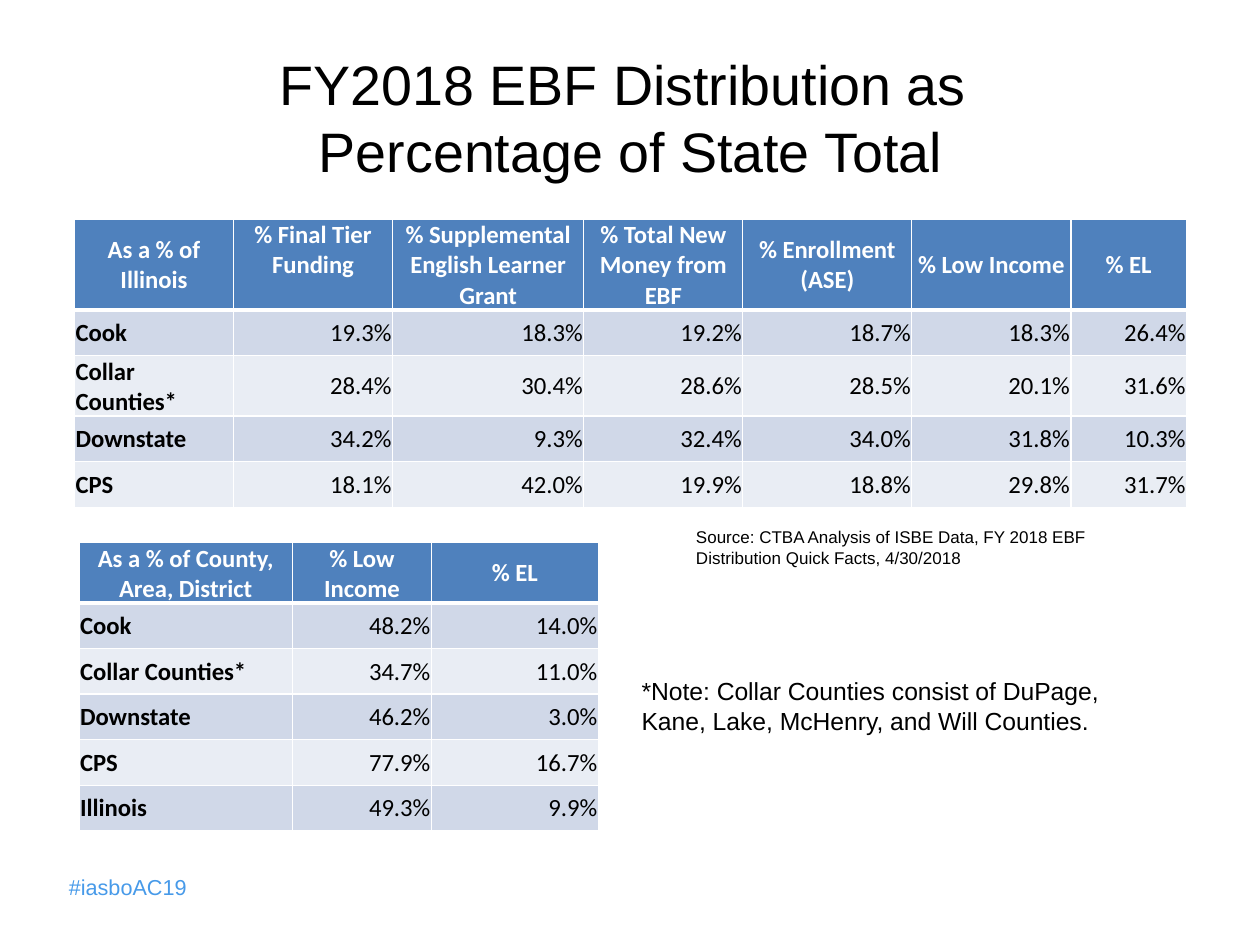
from copy import deepcopy
from dataclasses import dataclass

from pptx import Presentation
from pptx.dml.color import RGBColor as Color
from pptx.enum.text import MSO_ANCHOR as Anchor, MSO_AUTO_SIZE as AutoSize, PP_ALIGN as Align
from pptx.oxml import parse_xml
from pptx.oxml.ns import nsdecls, qn
from pptx.util import Emu, Pt

EMU_PER_PX = 9144


@dataclass(frozen=True)
class Theme:
    """Colours, fonts and type sizes of the slide."""
    text: str = "000000"
    white: str = "FFFFFF"
    header: str = "4F81BD"
    bands: tuple = ("D0D8E8", "E9EDF4")
    hashtag: str = "479AE9"
    body_font: str = "Arial"
    table_font: str = "Calibri"
    title_size: int = 36
    table_size: int = 16
    note_size: int = 16
    hashtag_size: int = 14
    source_size: int = 11
    thin_border: int = 1
    thick_border: int = 3


THEME = Theme()

STATE_SHARES = [
    ["As a % of Illinois", "% Final Tier Funding\v", "% Supplemental English Learner Grant",
     "% Total New Money from EBF", "% Enrollment (ASE)", "% Low Income", "% EL"],
    ["Cook", "19.3%", "18.3%", "19.2%", "18.7%", "18.3%", "26.4%"],
    ["Collar Counties*", "28.4%", "30.4%", "28.6%", "28.5%", "20.1%", "31.6%"],
    ["Downstate", "34.2%", "9.3%", "32.4%", "34.0%", "31.8%", "10.3%"],
    ["CPS", "18.1%", "42.0%", "19.9%", "18.8%", "29.8%", "31.7%"],
]
AREA_SHARES = [
    ["As a % of County, Area, District", "% Low Income", "% EL"],
    ["Cook", "48.2%", "14.0%"],
    ["Collar Counties*", "34.7%", "11.0%"],
    ["Downstate", "46.2%", "3.0%"],
    ["CPS", "77.9%", "16.7%"],
    ["Illinois", "49.3%", "9.9%"],
]


def px(length):
    """Turn whole pixels into EMU."""
    return Emu(length * EMU_PER_PX)


def format_text(text_frame, font, size, color, bold=False, align=Align.LEFT):
    """Format every run and line break of a text frame."""
    for paragraph in text_frame.paragraphs:
        paragraph.alignment = align
        for run in paragraph.runs:
            run.font.name = font
            run.font.size = Pt(size)
            run.font.bold = bold
            run.font.color.rgb = Color.from_string(color)
        for line_break in paragraph._p.findall(qn("a:br")):
            line_break.insert(0, deepcopy(paragraph.runs[0]._r.rPr))


def add_title(slide, text, left, top, width, height):
    """Place and format the title placeholder."""
    title = slide.shapes.title
    title.left, title.top, title.width, title.height = map(px, (left, top, width, height))
    text_frame = title.text_frame
    text_frame.text = text
    text_frame.auto_size = AutoSize.NONE
    text_frame.vertical_anchor = Anchor.MIDDLE
    format_text(text_frame, THEME.body_font, THEME.title_size, THEME.text, align=Align.CENTER)


def add_text(slide, text, left, top, width, height, size, color=THEME.text):
    """Add a wrapping text box."""
    shape = slide.shapes.add_textbox(*map(px, (left, top, width, height)))
    text_frame = shape.text_frame
    text_frame.word_wrap = True
    text_frame.text = text
    format_text(text_frame, THEME.body_font, size, color)


def set_borders(cell, row):
    """Draw white cell borders, thick between header and body."""
    thick_side = {0: "lnB", 1: "lnT"}.get(row)
    properties = cell._tc.get_or_add_tcPr()
    for side in ("lnL", "lnR", "lnT", "lnB"):
        width = THEME.thick_border if side == thick_side else THEME.thin_border
        properties.append(parse_xml(
            f'<a:{side} {nsdecls("a")} w="{Pt(width)}"><a:solidFill>'
            f'<a:srgbClr val="{THEME.white}"/></a:solidFill></a:{side}>'))


def format_cell(cell, text, row, column):
    """Fill and format one table cell by its position."""
    is_header = row == 0
    if is_header:
        fill, color, align = THEME.header, THEME.white, Align.CENTER
    else:
        fill, color = THEME.bands[(row - 1) % 2], THEME.text
        align = Align.LEFT if column == 0 else Align.RIGHT
    cell.text = text
    cell.vertical_anchor = Anchor.MIDDLE
    cell.margin_left = cell.margin_right = cell.margin_top = px(1)
    cell.margin_bottom = 0
    format_text(cell.text_frame, THEME.table_font, THEME.table_size, color,
                bold=is_header or column == 0, align=align)
    set_borders(cell, row)
    cell.fill.solid()
    cell.fill.fore_color.rgb = Color.from_string(fill)


def add_share_table(slide, rows, left, top, widths, heights):
    """Add a banded table of percentage shares."""
    frame = slide.shapes.add_table(len(rows), len(widths), px(left), px(top),
                                   px(sum(widths)), px(sum(heights)))
    table = frame.table
    for column, width in zip(table.columns, widths):
        column.width = px(width)
    for table_row, height in zip(table.rows, heights):
        table_row.height = px(height)
    for row, texts in enumerate(rows):
        for column, text in enumerate(texts):
            format_cell(table.cell(row, column), text, row, column)


def main():
    """Build and save the slide."""
    presentation = Presentation()
    presentation.slide_width, presentation.slide_height = px(1133), px(850)
    slide = presentation.slides.add_slide(presentation.slide_layouts[5])
    add_text(slide, "#iasboAC19", 52, 781, 131, 34, THEME.hashtag_size, THEME.hashtag)
    add_title(slide, "FY2018 EBF Distribution as \vPercentage of State Total", 57, 34, 1020, 142)
    add_share_table(slide, STATE_SHARES, 67, 197,
                    [143, 143, 172, 143, 152, 143, 104], [82, 41, 54, 41, 41])
    add_share_table(slide, AREA_SHARES, 71, 488, [192, 125, 150], [54] + [41] * 5)
    add_text(slide, "Source: CTBA Analysis of ISBE Data, FY 2018 EBF Distribution Quick Facts, 4/30/2018",
             616, 469, 441, 47, THEME.source_size)
    add_text(slide, "*Note: Collar Counties consist of DuPage, Kane, Lake, McHenry, and Will Counties.",
             567, 603, 441, 64, THEME.note_size)
    presentation.save("out.pptx")


if __name__ == "__main__":
    main()
